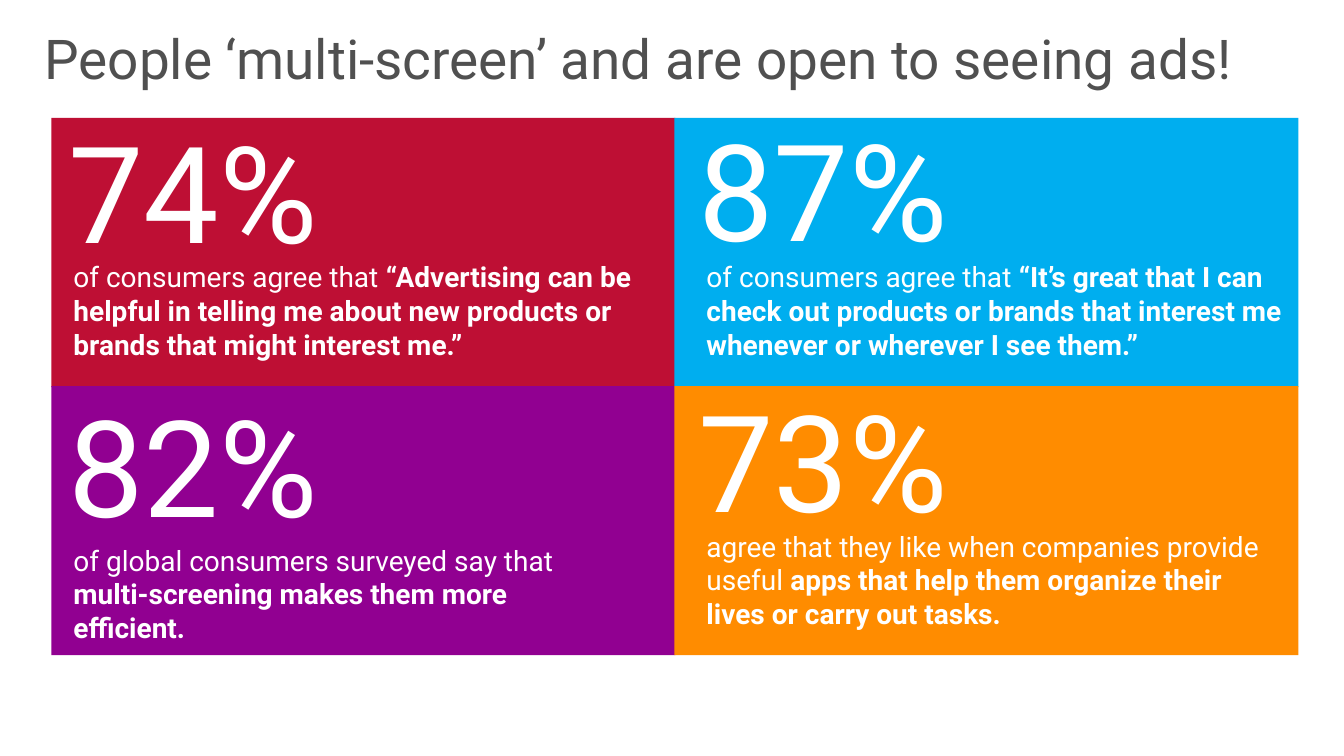
import pptx
import pptx.util
import pptx.dml.color
import pptx.enum.shapes
import pptx.enum.text

HUES = {
    "ink": "505050",
    "white": "FFFFFF",
    "red": "BE0F34",
    "blue": "00AEEF",
    "plum": "910091",
    "amber": "FF8C00",
}

TILES = [
    ("red", "74%", 10.3, 25.3, 60, "of consumers agree that ",
     "“Advertising can be helpful in telling me about new products or brands that might interest me.”"),
    ("blue", "87%", 10.1, 25.3, 60, "of consumers agree that ",
     "“It’s great that I can check out products or brands that interest me whenever or wherever I see them.”"),
    ("plum", "82%", 37.5, 53.4, 52.9, "of global consumers surveyed say that ",
     "multi-screening makes them more efficient."),
    ("amber", "73%", 37, 52, 58.1, "agree that they like when companies provide useful ",
     "apps that help them organize their lives or carry out tasks."),
]


class Deck:
    """Draw styled parts on a slide ruled into 133.33 columns and 75 rows."""

    font = "Roboto"
    cols, rows = 133.33, 75

    def __init__(self):
        self.show = pptx.Presentation()
        self.show.slide_width = pptx.util.Inches(13.33)
        self.show.slide_height = pptx.util.Inches(7.5)
        self.slide = self.show.slides.add_slide(self.show.slide_layouts[5])

    def box(self, col, row, wide, high):
        x = self.show.slide_width / self.cols
        y = self.show.slide_height / self.rows
        return [round(n) for n in (col * x, row * y, wide * x, high * y)]

    def hue(self, name):
        return pptx.dml.color.RGBColor.from_string(HUES[name])

    def style(self, run, size, hue, bold=False):
        run.font.name = self.font
        run.font.size = pptx.util.Pt(size)
        run.font.bold = bold
        run.font.color.rgb = self.hue(hue)

    def title(self, text, *area):
        head = self.slide.shapes.title
        head.left, head.top, head.width, head.height = self.box(*area)
        frame = head.text_frame
        frame.text = text
        frame.word_wrap = True
        frame.auto_size = pptx.enum.text.MSO_AUTO_SIZE.NONE
        frame.vertical_anchor = pptx.enum.text.MSO_ANCHOR.TOP
        frame.margin_left = frame.margin_right = 0
        frame.margin_top = frame.margin_bottom = 0
        line = frame.paragraphs[0]
        line.alignment = pptx.enum.text.PP_ALIGN.LEFT
        line.line_spacing = 0.9
        self.style(line.runs[0], 39.2, "ink")

    def tile(self, hue, *area):
        kind = pptx.enum.shapes.MSO_SHAPE.RECTANGLE
        shape = self.slide.shapes.add_shape(kind, *self.box(*area))
        shape.shadow.inherit = False
        shape.fill.solid()
        shape.fill.fore_color.rgb = self.hue(hue)
        shape.line.fill.background()

    def text(self, size, lead, *area, strong=""):
        frame = self.slide.shapes.add_textbox(*self.box(*area)).text_frame
        frame.word_wrap = True
        frame.auto_size = pptx.enum.text.MSO_AUTO_SIZE.SHAPE_TO_FIT_TEXT
        line = frame.paragraphs[0]
        line.text = lead
        self.style(line.runs[0], size, "white")
        if strong:
            run = line.add_run()
            run.text = strong
            self.style(run, size, "white", True)


def main():
    deck = Deck()
    deck.title("People ‘multi-screen’ and are open to seeing ads!", 4.4, 3.2, 124.5, 9.8)
    for spot, (hue, *_) in enumerate(TILES):
        row, col = divmod(spot, 2)
        deck.tile(hue, 5.1 + 61.8 * col, 11.7 + 26.6 * row, 61.9, 26.7)
    for spot, (_, share, top, base, wide, lead, strong) in enumerate(TILES):
        col = spot % 2
        deck.text(96, share, 5.8 + 62.5 * col, top, 32.5, 17.2)
        deck.text(20, lead, 6.3 + 62.8 * col, base, wide, 11.1, strong=strong)
    deck.show.save("out.pptx")


if __name__ == "__main__":
    main()
